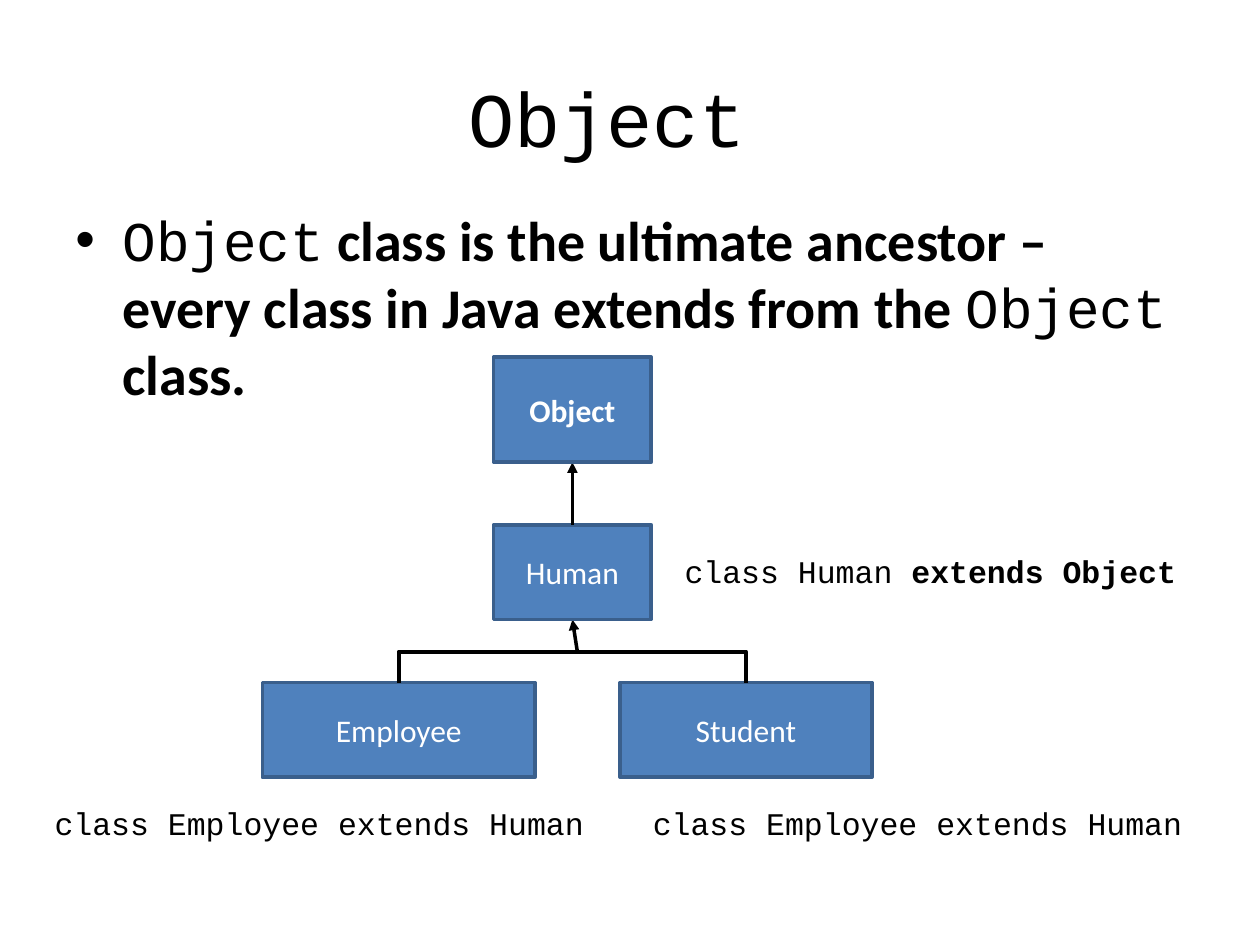
from lxml import etree
from pptx import Presentation
from pptx import util as u
from pptx.dml.color import RGBColor
from pptx.enum import shapes, text
from pptx.oxml.ns import qn

BLACK, WHITE, BLUE, DARK_BLUE = "000000", "FFFFFF", "4F81BD", "3A5F8C"
SANS, MONO = "Calibri", "Courier New"
BOX_HEIGHT = 1.91
CHILD_TOP = 13.76
BRANCH_TOP = 13.14


def color(value):
    return RGBColor.from_string(value)


def add_spans(para, spans, size, hue=BLACK):
    """Append (wording, font name, bold) spans to a paragraph."""
    for wording, font_name, bold in spans:
        span = para.add_run()
        span.text = wording
        span.font.name = font_name
        span.font.bold = bold
        span.font.size = u.Pt(size)
        span.font.color.rgb = color(hue)


def add_text(page, place, spans, size, wrap=True):
    box = page.shapes.add_textbox(*map(u.Cm, place))
    box.text_frame.word_wrap = wrap
    para = box.text_frame.paragraphs[0]
    add_spans(para, spans, size)
    return box.text_frame, para


def add_title(page, wording):
    frame, para = add_text(page, (1.27, 0.76, 22.86, 3.18), [(wording, MONO, False)], 44)
    frame.vertical_anchor = text.MSO_ANCHOR.MIDDLE
    para.alignment = text.PP_ALIGN.CENTER


def add_bullet(page, spans):
    _, para = add_text(page, (1.27, 4.01, 22.86, 12.78), spans, 32)
    para.space_before = u.Pt(6.4)
    properties = para._p.get_or_add_pPr()
    properties.set("marL", str(u.Cm(0.95)))
    properties.set("indent", str(-u.Cm(0.95)))
    etree.SubElement(properties, qn("a:buFont"), typeface="Arial")
    etree.SubElement(properties, qn("a:buChar"), char="•")


def add_class_box(page, wording, center, top, width, height=BOX_HEIGHT, bold=False):
    box = page.shapes.add_shape(
        shapes.MSO_SHAPE.RECTANGLE,
        *map(u.Cm, (center - width / 2, top, width, height)))
    box.shadow.inherit = False
    box.fill.solid()
    box.fill.fore_color.rgb = color(BLUE)
    box.line.color.rgb = color(DARK_BLUE)
    box.line.width = u.Pt(2)
    box.text_frame.vertical_anchor = text.MSO_ANCHOR.MIDDLE
    para = box.text_frame.paragraphs[0]
    para.alignment = text.PP_ALIGN.CENTER
    add_spans(para, [(wording, SANS, bold)], 18, WHITE)


def add_arrow(page, start, end):
    arrow = page.shapes.add_connector(
        shapes.MSO_CONNECTOR.STRAIGHT, *map(u.Cm, (*start, *end)))
    arrow.line.color.rgb = color(BLACK)
    arrow.line.width = u.Pt(2)
    etree.SubElement(arrow.line._get_or_add_ln(), qn("a:tailEnd"), type="triangle")
    etree.SubElement(arrow._element.spPr, qn("a:effectLst"))


def add_branch(page, left, right):
    """Join the tops of the two subclass boxes."""
    corners = [(left, CHILD_TOP), (left, BRANCH_TOP), (right, BRANCH_TOP), (right, CHILD_TOP)]
    points = [(u.Cm(x), u.Cm(y)) for x, y in corners]
    builder = page.shapes.build_freeform(*points[0])
    builder.add_line_segments(points[1:], close=False)
    branch = builder.convert_to_shape()
    branch.shadow.inherit = False
    branch.fill.background()
    branch.line.color.rgb = color(BLACK)
    branch.line.width = u.Pt(2.5)


def add_code(page, left, top, width, *spans):
    add_text(page, (left, top, width, 1.02),
             [(wording, MONO, bold) for wording, bold in spans], 18, wrap=False)


def main():
    deck = Presentation()
    deck.slide_width, deck.slide_height = u.Cm(25.4), u.Cm(19.05)
    page = deck.slides.add_slide(deck.slide_layouts[6])

    add_title(page, "Object ")
    add_bullet(page, [
        ("Object", MONO, False),
        (" class is the ultimate ancestor – every class in Java extends from the ", SANS, True),
        ("Object", MONO, False),
        (" class.", SANS, True),
    ])

    trunk, employee, student = 11.54, 8.04, 15.04
    object_top, object_height, human_top = 7.2, 2.12, 10.58
    add_class_box(page, "Student", student, CHILD_TOP, 5.08)
    add_class_box(page, "Employee", employee, CHILD_TOP, 5.5)
    add_branch(page, employee, student)
    add_arrow(page, (trunk + 0.1, BRANCH_TOP), (trunk, human_top + BOX_HEIGHT))
    add_class_box(page, "Human", trunk, human_top, 3.18)
    add_arrow(page, (trunk, human_top), (trunk, object_top + object_height))
    add_class_box(page, "Object", trunk, object_top, 3.18, object_height, bold=True)

    add_code(page, 13.55, 11.01, 10.47, ("class Human ", False), ("extends Object", True))
    for left in (0.85, 12.91):
        add_code(page, left, 16.09, 11.22, ("class Employee extends Human", False))

    deck.save("out.pptx")


if __name__ == "__main__":
    main()
